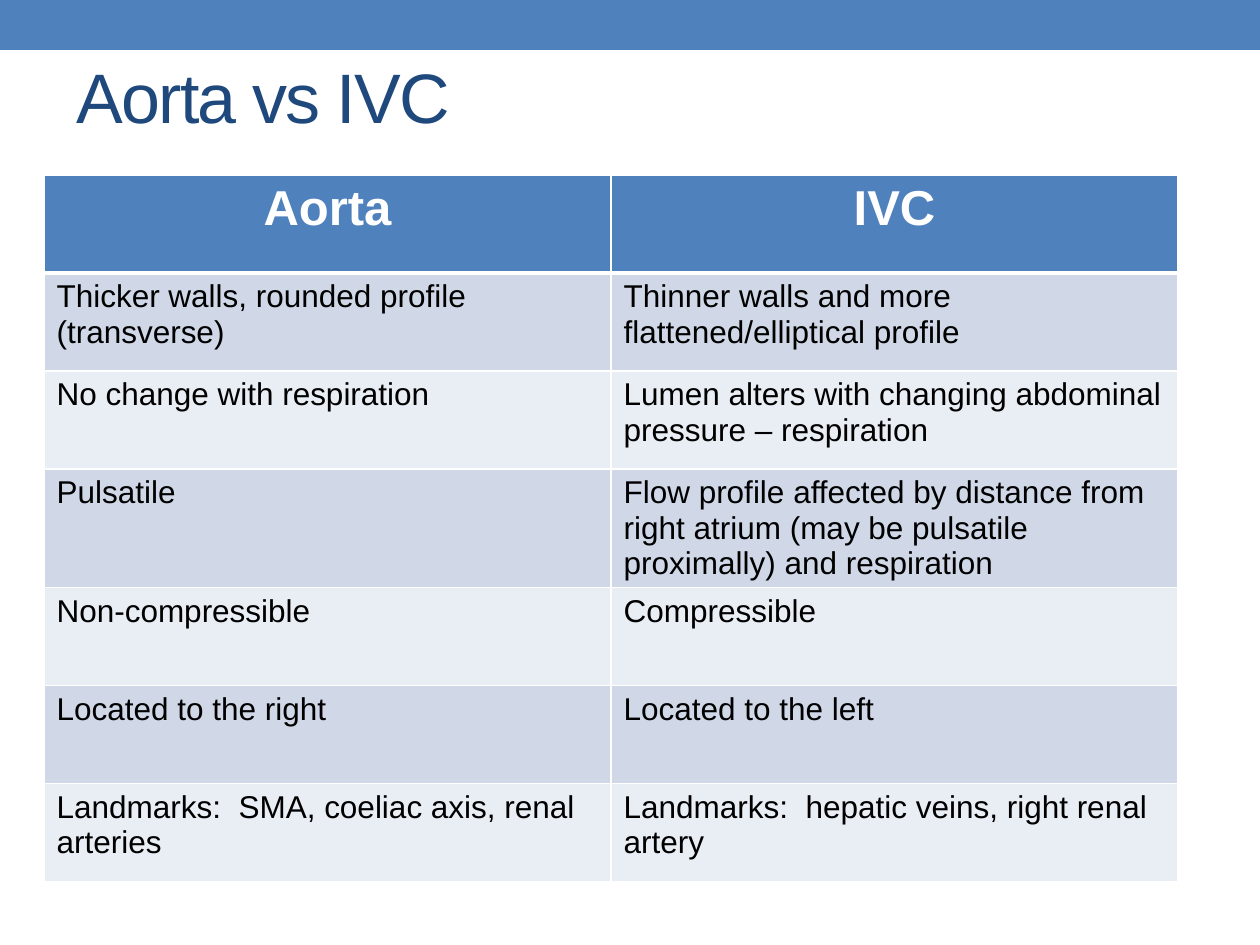
from lxml import etree
from pptx import Presentation
from pptx import util as u
from pptx.dml.color import RGBColor
from pptx.enum import shapes, text
from pptx.oxml import ns

PX = 914400 / 126
FONT = "Arial"
BLUE = RGBColor(0x4F, 0x81, 0xBD)
NAVY = RGBColor(0x1F, 0x49, 0x7D)
BAND_DARK = RGBColor(0xD0, 0xD8, 0xE8)
BAND_LIGHT = RGBColor(0xE9, 0xED, 0xF4)
WHITE = RGBColor(0xFF, 0xFF, 0xFF)
BLACK = RGBColor(0, 0, 0)

COMPARISON = [
    ("Aorta", "IVC"),
    ("Thicker walls, rounded profile (transverse)",
     "Thinner walls and more flattened/elliptical profile"),
    ("No change with respiration",
     "Lumen alters with changing abdominal pressure – respiration"),
    ("Pulsatile",
     "Flow profile affected by distance from right atrium "
     "(may be pulsatile proximally) and respiration"),
    ("Non-compressible", "Compressible"),
    ("Located to the right", "Located to the left"),
    ("Landmarks:  SMA, coeliac axis, renal arteries",
     "Landmarks:  hepatic veins, right renal artery"),
]


def px(length):
    return u.Emu(round(length * PX))


def add_run(paragraph, wording, size, color, bold=False):
    run = paragraph.add_run()
    run.text = wording
    run.font.name = FONT
    run.font.size = u.Pt(size)
    run.font.bold = bold
    run.font.color.rgb = color
    return run


def add_top_band(slide, box):
    band = slide.shapes.add_shape(shapes.MSO_SHAPE.RECTANGLE, *map(px, box))
    band.shadow.inherit = False
    band.fill.solid()
    band.fill.fore_color.rgb = BLUE
    band.line.fill.background()
    # Behind the title, whose box overlaps the band
    slide.shapes.element.insert(2, band.element)


def place_title(slide, box, wording):
    title = slide.shapes.title
    title.left, title.top, title.width, title.height = map(px, box)
    frame = title.text_frame
    frame.vertical_anchor = text.MSO_ANCHOR.MIDDLE
    paragraph = frame.paragraphs[0]
    paragraph.alignment = text.PP_ALIGN.LEFT
    run = add_run(paragraph, wording, 40, NAVY)
    run.font._element.set("spc", "-100")


def set_borders(cell, bottom_width, top_width):
    """Draw white cell borders; they must come before the fill."""
    properties = cell._tc.get_or_add_tcPr()
    widths = {"lnL": 1, "lnR": 1, "lnT": top_width, "lnB": bottom_width}
    for side, width in widths.items():
        line = etree.SubElement(properties, ns.qn(f"a:{side}"), w=str(u.Pt(width)))
        fill = etree.SubElement(line, ns.qn("a:solidFill"))
        etree.SubElement(fill, ns.qn("a:srgbClr"), val=str(WHITE))


def add_comparison(slide, box, rows):
    table = slide.shapes.add_table(len(rows), len(rows[0]), *map(px, box)).table
    for r, row in enumerate(rows):
        header = r == 0
        for c, wording in enumerate(row):
            cell = table.cell(r, c)
            set_borders(cell, 3 if header else 1, 3 if r == 1 else 1)
            cell.fill.solid()
            cell.fill.fore_color.rgb = (
                BLUE if header else BAND_DARK if r % 2 else BAND_LIGHT)
            paragraph = cell.text_frame.paragraphs[0]
            if header:
                paragraph.alignment = text.PP_ALIGN.CENTER
                add_run(paragraph, wording, 28, WHITE, bold=True)
            else:
                add_run(paragraph, wording, 18, BLACK)


def main():
    deck = Presentation()
    deck.slide_width, deck.slide_height = px(1260), px(945)
    slide = deck.slides.add_slide(deck.slide_layouts[5])
    add_top_band(slide, (0, 0, 1260, 50))
    place_title(slide, (64, 16, 1134, 158), "Aorta vs IVC")
    add_comparison(slide, (44, 175, 1134, 686), COMPARISON)
    deck.save("out.pptx")


if __name__ == "__main__":
    main()
